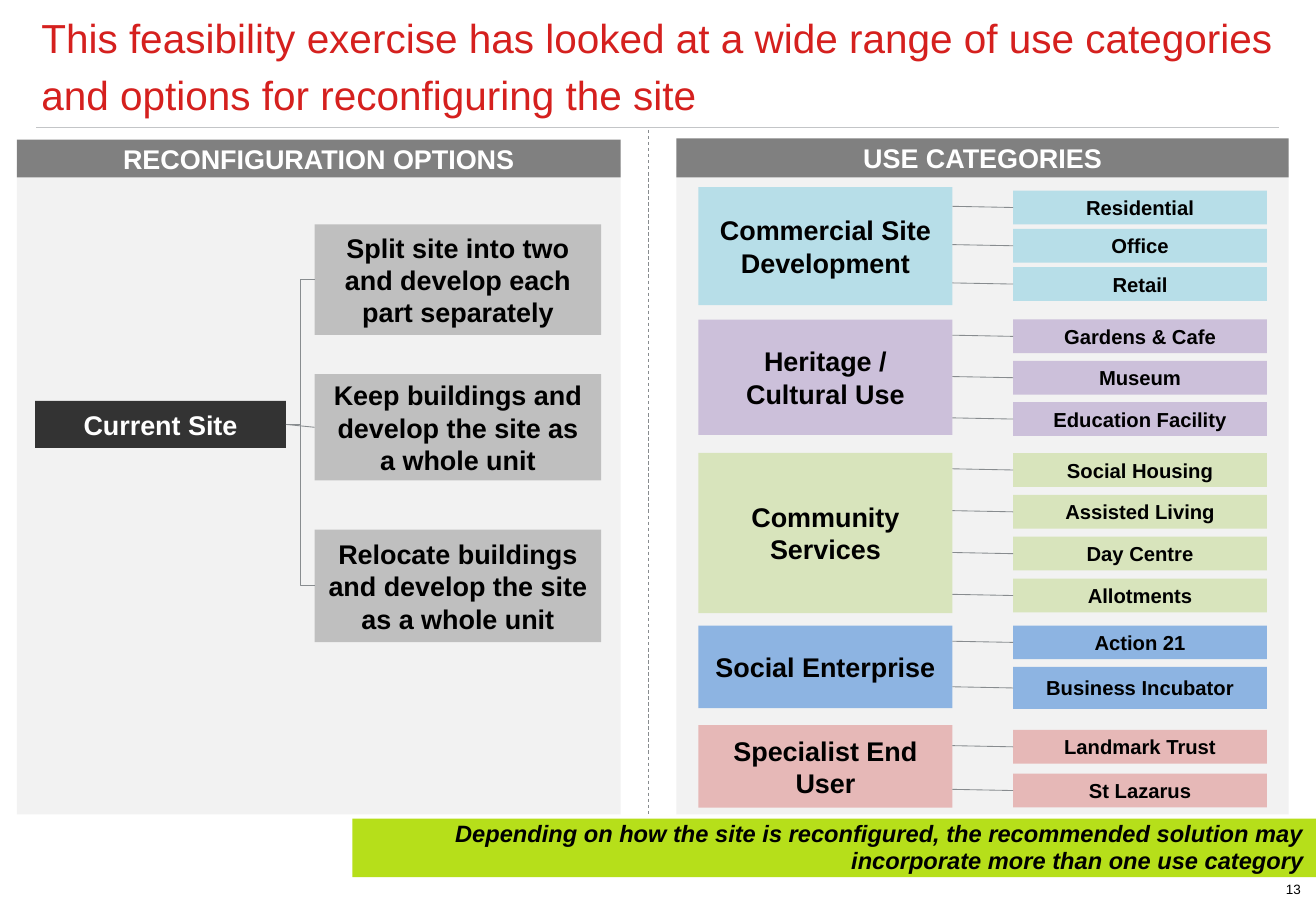
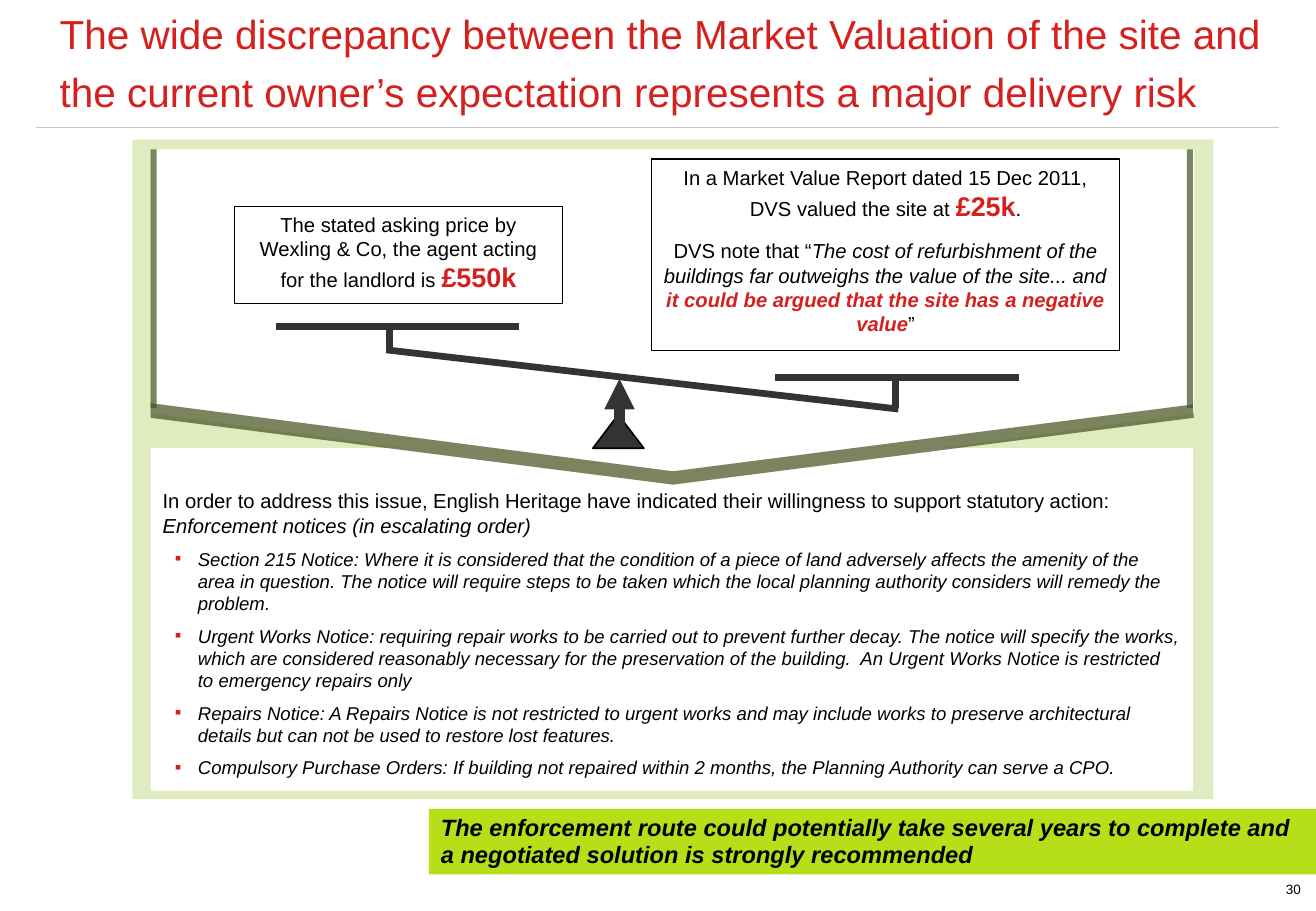
from lxml.etree import SubElement
from pptx import Presentation
from pptx.dml.color import RGBColor
from pptx.enum.dml import MSO_LINE
from pptx.enum.shapes import MSO_CONNECTOR as LINK, MSO_SHAPE as SHAPE
from pptx.enum.text import MSO_ANCHOR as ANCHOR, MSO_AUTO_SIZE as FIT, PP_ALIGN as ALIGN
from pptx.oxml.ns import qn
from pptx.util import Pt

RGB = RGBColor.from_string
RED, LIME, BLACK, WHITE = "D5201E", "B6DF1A", "000000", "FFFFFF"
DARK, GREY, RULE, OLIVE = "333333", "888C8F", "C3C5C7", "44511A"
INSET = (7.2, 3.6, 7.2, 3.6)


def put(shape, text="", fill=None, line=None, width=0.75, alpha=None, size=12,
        color=BLACK, bold=False, italic=False, align=ALIGN.CENTER,
        anchor=ANCHOR.MIDDLE, inset=INSET, lead=None, after=0, wrap=True):
    """Format a shape; text is a string or a list of paragraphs,
    each a string or a list of (words, font changes) runs."""
    shape.shadow.inherit = False
    if fill:
        shape.fill.solid()
        shape.fill.fore_color.rgb = RGB(fill)
        if alpha:
            tint = shape.fill._xPr.find(".//" + qn("a:srgbClr"))
            SubElement(tint, qn("a:alpha"), val=str(alpha * 1000))
    else:
        shape.fill.background()
    if line:
        shape.line.color.rgb = RGB(line)
        shape.line.width = Pt(width)
    else:
        shape.line.fill.background()
    if not text:
        return shape
    frame = shape.text_frame
    frame.auto_size = FIT.NONE
    frame.word_wrap = wrap
    frame.vertical_anchor = anchor
    (frame.margin_left, frame.margin_top,
     frame.margin_right, frame.margin_bottom) = map(Pt, inset)
    for n, para in enumerate([text] if isinstance(text, str) else text):
        p = frame.add_paragraph() if n else frame.paragraphs[0]
        p.alignment = align
        p.space_before = Pt(0)
        p.space_after = Pt(after)
        if lead:
            p.line_spacing = lead
        for words, change in [(para, {})] if isinstance(para, str) else para:
            look = dict(size=size, color=color, bold=bold, italic=italic) | change
            run = p.add_run()
            run.text = words
            font = run.font
            font.name = "Arial"
            font.size = Pt(look["size"])
            font.color.rgb = RGB(look["color"])
            font.bold, font.italic = look["bold"], look["italic"]
    return shape


def join(shapes, ends, color=GREY, width=0.5, kind=LINK.STRAIGHT):
    """Draw a connector between the points (x1, y1, x2, y2)."""
    link = shapes.add_connector(kind, *map(Pt, ends))
    link.line.color.rgb = RGB(color)
    link.line.width = Pt(width)
    SubElement(link._element.spPr, qn("a:effectLst"))
    return link


deck = Presentation()
deck.slide_width, deck.slide_height = Pt(780), Pt(540)

# Parts that both slides share: title, rule, banner, page number
pages = [
    ("This feasibility exercise has looked at a wide range of use categories "
     "and options for reconfiguring the site", (20.9, 20.2, 738, 54),
     "Depending on how the site is reconfigured, the recommended solution may "
     "incorporate more than one use category", (208.8, 485.3, 571.2, 34.6),
     ALIGN.RIGHT, "13"),
    ("The wide discrepancy between the Market Valuation of the site and the "
     "current owner’s expectation represents a major delivery risk",
     (31.7, 0, 748.3, 72),
     "The enforcement route could potentially take several years to complete "
     "and a negotiated solution is strongly recommended",
     (254.2, 479.5, 525.8, 38.9), ALIGN.LEFT, "30"),
]
drawn = []
for head, spot, note, band, side, num in pages:
    slide = deck.slides.add_slide(deck.slide_layouts[5])
    shapes = slide.shapes
    title = shapes.title
    title.left, title.top, title.width, title.height = map(Pt, spot)
    put(title, head, size=24, color=RED, align=ALIGN.LEFT, anchor=ANCHOR.BOTTOM,
        inset=(3.6,) * 4, lead=Pt(34))
    join(shapes, (21.6, 75.6, 758.2, 75.6), RULE, 0.75)
    put(shapes.add_shape(SHAPE.RECTANGLE, *map(Pt, band)), note, LIME,
        size=14, bold=True, italic=True, align=side, lead=0.95)
    put(shapes.add_textbox(*map(Pt, (758.9, 519, 12.2, 16.6))), num, size=8,
        align=ALIGN.RIGHT, anchor=ANCHOR.TOP, inset=(0, 3.6, 0, 3.6))
    drawn.append(shapes)
options, scales = drawn

# Slide 1: panels and their headings
for name, left, width, top in [("RECONFIGURATION OPTIONS", 10.1, 357.8, 82.8),
                               ("USE CATEGORIES", 401, 362.9, 82.1)]:
    for text, y, end, fill in [("", 99, 482.8, "F2F2F2"), (name, top, 105.2, "808080")]:
        put(options.add_shape(SHAPE.RECTANGLE, *map(Pt, (left, y, width, end - y))),
            text, fill, size=16, color=WHITE, bold=True)
split = join(options, (384.5, 77, 384.5, 483.1))
split.line.dash_style = MSO_LINE.DASH

# Site options tree
site = put(options.add_shape(SHAPE.RECTANGLE, *map(Pt, (20.9, 237.6, 148.6, 28))),
           "Current Site", DARK, size=16, color=WHITE, bold=True, wrap=False)
for text, top, high, kind in [
        ("Split site into two and develop each part separately", 133, 65.5, LINK.ELBOW),
        ("Keep buildings and develop the site as a whole unit", 221.8, 63, LINK.STRAIGHT),
        ("Relocate buildings and develop the site as a whole unit", 314, 66.6, LINK.ELBOW)]:
    choice = put(options.add_shape(SHAPE.RECTANGLE, *map(Pt, (186.5, top, 169.9, high))),
                 text, "BFBFBF", size=16, bold=True)
    link = join(options, (169.5, 251.6, 186.5, top + high / 2), kind=kind)
    link.begin_connect(site, 3)
    link.end_connect(choice, 1)

# Use categories: name, top, height, fill, first use top, pitch, last height, uses
groups = [
    ("Commercial Site Development", 110.9, 70, "B7DEE8", 113, 22.7, 20,
     ["Residential", "Office", "Retail"]),
    ("Heritage / Cultural Use", 189.4, 68.4, "CCC0DA", 189.4, 24.5, 20,
     ["Gardens & Cafe", "Museum", "Education Facility"]),
    ("Community Services", 268.4, 95, "D8E4BC", 268.6, 24.8, 20,
     ["Social Housing", "Assisted Living", "Day Centre", "Allotments"]),
    ("Social Enterprise", 370.8, 49, "8DB4E2", 370.8, 24.5, 25,
     ["Action 21", "Business Incubator"]),
    ("Specialist End User", 429.8, 49, "E6B8B7", 432.7, 25.9, 20,
     ["Landmark Trust", "St Lazarus"]),
]
for name, top, high, fill, first, pitch, last, uses in groups:
    put(options.add_shape(SHAPE.RECTANGLE, *map(Pt, (414, top, 150.5, high))),
        name, fill, size=16, bold=True)
    for n, use in enumerate(uses):
        y = first + n * pitch
        tall = last if n == len(uses) - 1 else 20
        item = put(options.add_shape(SHAPE.RECTANGLE, *map(Pt, (600.5, y, 150.5, tall))),
                   use, fill, bold=True)
        mid = y + tall / 2
        join(options, (600.5, mid, 564.5, mid - 0.7)).begin_connect(item, 1)

# Slide 2: frame, notice panel and downward arrow panel
put(scales.add_shape(SHAPE.RECTANGLE, *map(Pt, (78.5, 82.8, 640.8, 391))), fill="E1EBC0")
slant = {"italic": True, "size": 11}
notes = [
    "In order to address this issue, English Heritage have indicated their "
    "willingness to support statutory action:",
    [("Enforcement notices (in escalating order)", {"italic": True})],
    [("Section 215 Notice: Where it is considered that the condition of a piece of "
      "land adversely affects the amenity of the area in question. The notice will "
      "require steps to be taken which the local planning authority considers will "
      "remedy the problem.", slant)],
    [("Urgent Works Notice: requiring repair works to be carried out to prevent "
      "further decay. The notice will specify the works, which are considered "
      "reasonably necessary for the preservation of the building.  An Urgent Works "
      "Notice is restricted to emergency repairs only", slant)],
    [("Repairs Notice: A Repairs Notice is not restricted to urgent works and may "
      "include works to preserve architectural details but can not be used to "
      "restore lost features.", slant)],
    [("Compulsory Purchase Orders: If building not repaired within 2 months, the "
      "Planning Authority can serve a CPO.", slant)],
]
panel = put(scales.add_shape(SHAPE.RECTANGLE, *map(Pt, (89.3, 265.7, 617.8, 203))),
            notes, WHITE, align=ALIGN.LEFT, anchor=ANCHOR.TOP,
            inset=(7.2, 24, 7.2, 3.6), after=6)
lines = panel.text_frame.paragraphs
lines[0].space_after = Pt(0)
for p in lines[2:]:
    props = p._p.get_or_add_pPr()
    props.set("marL", str(Pt(20.9)))
    props.set("indent", str(Pt(-13.7)))
    SubElement(SubElement(props, qn("a:buClr")), qn("a:srgbClr"), val=RED)
    SubElement(props, qn("a:buFont"), typeface="Arial")
    SubElement(props, qn("a:buChar"), char="▪")

arrow = put(scales.add_shape(SHAPE.PENTAGON, *map(Pt, (299.5, -121, 198.7, 617.8))),
            fill=WHITE)
arrow.rotation = 90
arrow.adjustments[0] = 0.212

# Olive edge of the arrow panel
edge = [(707, 239.8), (707.6, 247.7), (398.9, 287.3), (89.3, 247.7),
        (89.3, 239), (398.9, 279.4)]
base = [(351.4, 265.7), (365, 247.7), (367.9, 247.7), (381.6, 265.7)]
for spots, look in [(edge, dict(fill=OLIVE, alpha=70)),
                    (base, dict(fill=DARK, line=BLACK, width=1))]:
    pen = scales.build_freeform(*map(Pt, spots[0]), scale=1.0)
    pen.add_line_segments([(Pt(x), Pt(y)) for x, y in spots[1:]], close=True)
    put(pen.convert_to_shape(), **look)
for x in (89.3, 703.5):
    put(scales.add_shape(SHAPE.RECTANGLE, *map(Pt, (x, 88.6, 3.6, 153.4))),
        fill=OLIVE, alpha=70)

# Scales: pans, beam, hangers, pivot
for ends in [(163.4, 193.7, 307.4, 193.7), (459.4, 223.9, 604, 223.9),
             (229, 207.4, 532.5, 242.5), (230.7, 207.4, 230.7, 193.7),
             (530.6, 242, 530.6, 223.9)]:
    join(scales, ends, DARK, 4)
pivot = join(scales, (367.2, 251.3, 367.2, 224.6), DARK, 6)
SubElement(pivot.line._get_or_add_ln(), qn("a:tailEnd"), type="triangle")

# Price boxes
loud = {"size": 16, "color": RED, "bold": True}
asking = [[("The stated asking price by Wexling & Co, the agent acting for the "
            "landlord is ", {}), ("£550k", loud)]]
valued = [
    [("In a Market Value Report dated 15 Dec 2011, DVS valued the site at ", {}),
     ("£25k", loud), (".", {})],
    [("DVS note that “", {}),
     ("The cost of refurbishment of the buildings far outweighs the value of the "
      "site... and ", {"italic": True}),
     ("it could be argued that the site has a negative value",
      {"italic": True, "bold": True, "color": RED}), ("”", {})],
]
for text, spot in [(asking, (139, 122.4, 194.4, 57.6)),
                   (valued, (386.3, 94.3, 277.2, 113.3))]:
    put(scales.add_shape(SHAPE.RECTANGLE, *map(Pt, spot)), text, WHITE, BLACK,
        anchor=ANCHOR.TOP, after=10)

deck.save("out.pptx")
